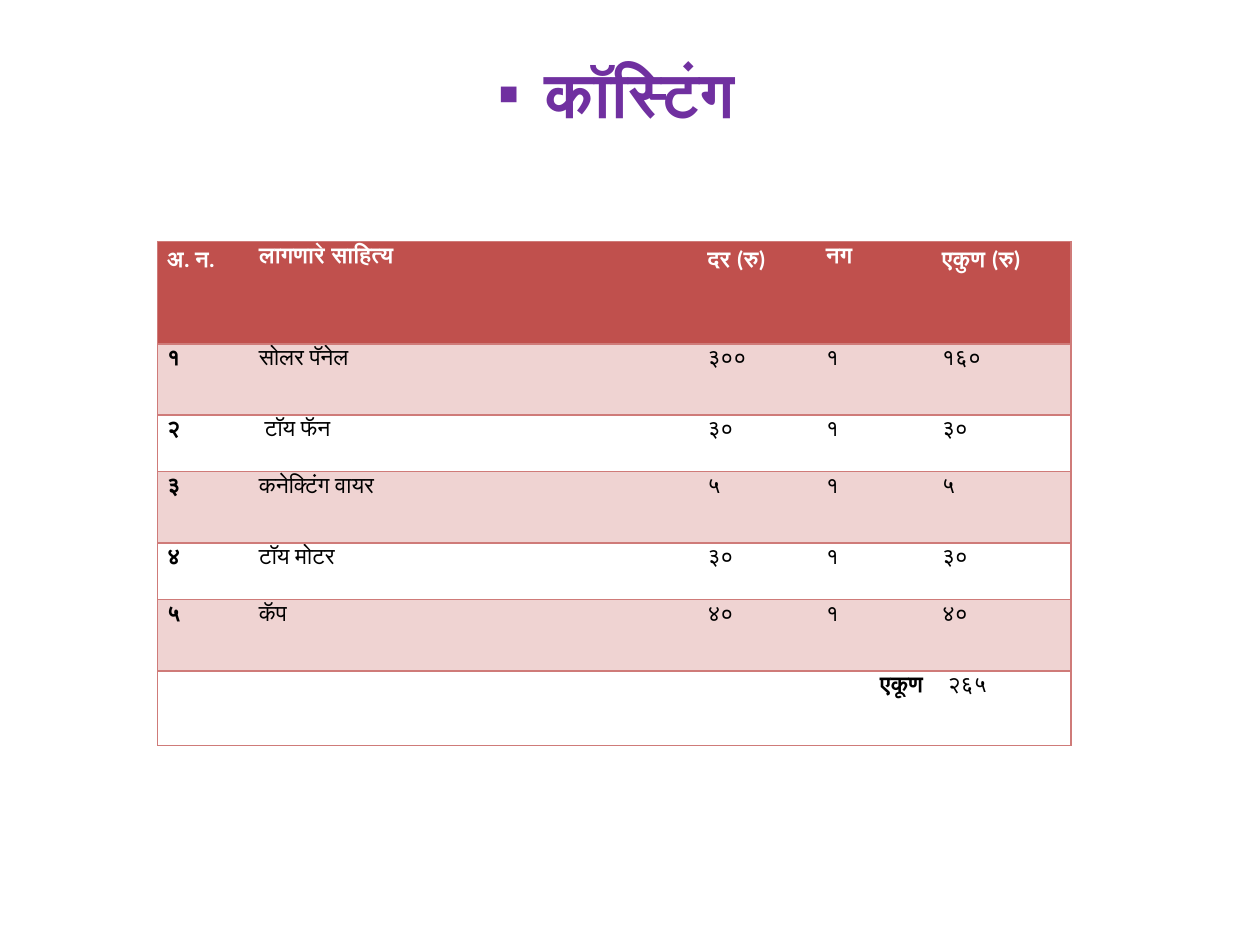
from lxml.etree import SubElement
from pptx import Presentation
from pptx.dml.color import RGBColor
from pptx.enum.text import MSO_ANCHOR, PP_ALIGN
from pptx.oxml.ns import qn
from pptx.util import Cm, Pt

COLORS = {
    "title": "7030A0",
    "header": "C0504D",
    "band": "EFD3D2",
    "rule": "CF7B79",
    "white": "FFFFFF",
    "black": "000000",
}
HEADINGS = ["अ. न.", "लागणारे साहित्य", "दर (रु)", "नग", "एकुण (रु)"]
ITEMS = [
    ["१", "सोलर पॅनेल", "३००", "१", "१६०"],
    ["२", " टॉय फॅन", "३०", "१", "३०"],
    ["३", "कनेक्टिंग वायर", "५", "१", "५"],
    ["४", "टॉय मोटर", "३०", "१", "३०"],
    ["५", "कॅप", "४०", "१", "४०"],
]
TOTAL = ["एकूण", "", "", "", " २६५"]
COLUMN_WIDTHS = [1.85, 9.04, 2.39, 2.34, 2.79]
ROW_HEIGHTS = [2.06, 1.44, 1.14, 1.44, 1.14, 1.44, 1.5]


def write_text(frame, text, *, size, font, color, bold=False,
               align=PP_ALIGN.LEFT, line_spacing=None, before=0, after=0):
    para = frame.paragraphs[0]
    para.alignment = align
    para.line_spacing = line_spacing
    para.space_before = Pt(before)
    para.space_after = Pt(after)
    span = para.add_run()
    span.text = text
    span.font.size = Pt(size)
    span.font.name = font
    span.font.bold = bold
    span.font.color.rgb = RGBColor.from_string(COLORS[color])
    return para


def add_bullet(para, character, indent):
    properties = para._p.get_or_add_pPr()
    properties.set("marL", str(indent))
    properties.set("indent", str(-indent))
    SubElement(properties, qn("a:buFont"), typeface="Arial")
    SubElement(properties, qn("a:buChar"), char=character)


def draw_borders(cell, shown):
    properties = cell._tc.get_or_add_tcPr()
    for side in "LRTB":
        line = SubElement(properties, qn(f"a:ln{side}"), w=str(Pt(1)))
        if side in shown:
            fill = SubElement(line, qn("a:solidFill"))
            SubElement(fill, qn("a:srgbClr"), val=COLORS["rule"])
        else:
            SubElement(line, qn("a:noFill"))


def fill_cell(cell, color):
    if color:
        cell.fill.solid()
        cell.fill.fore_color.rgb = RGBColor.from_string(COLORS[color])
    else:
        cell.fill.background()


def add_title(page, left, top, width, height):
    box = page.shapes.add_textbox(left, top, width, height)
    frame = box.text_frame
    frame.word_wrap = True
    frame.vertical_anchor = MSO_ANCHOR.MIDDLE
    para = write_text(frame, "कॉस्टिंग ", size=36, font="Montserrat",
                      color="title", bold=True, align=PP_ALIGN.CENTER, before=7.2)
    add_bullet(para, "▪", Cm(0.95))


def add_cost_table(page, left, top, width, height):
    rows = [HEADINGS, *ITEMS, TOTAL]
    last_row, last_column = len(rows) - 1, len(HEADINGS) - 1
    table = page.shapes.add_table(
        len(rows), len(HEADINGS), left, top, width, height).table
    table.first_row = False
    table.horz_banding = False
    for column, column_width in zip(table.columns, COLUMN_WIDTHS):
        column.width = Cm(column_width)
    for row, row_height in zip(table.rows, ROW_HEIGHTS):
        row.height = Cm(row_height)
    table.cell(last_row, 0).merge(table.cell(last_row, last_column - 1))

    for row_index, texts in enumerate(rows):
        is_header, is_total = row_index == 0, row_index == last_row
        background = "header" if is_header else "band" if row_index % 2 else None
        for column_index, text in enumerate(texts):
            cell = table.cell(row_index, column_index)
            is_first, is_last = column_index == 0, column_index == last_column
            draw_borders(cell, "TB" + "L" * is_first + "R" * is_last)
            fill_cell(cell, background)
            cell.margin_left = cell.margin_right = Cm(0.19)
            cell.margin_top = cell.margin_bottom = 0
            if not text:
                continue
            uses_calibri = is_header or (row_index == 1 and is_first)
            write_text(cell.text_frame, text, size=13,
                       font="Calibri" if uses_calibri else "Arial",
                       color="white" if is_header else "black",
                       bold=is_header or is_first,
                       align=PP_ALIGN.RIGHT if is_total and is_first else PP_ALIGN.LEFT,
                       line_spacing=1.15, after=10 if is_last else 0)


def main():
    deck = Presentation()
    deck.slide_width, deck.slide_height = Cm(25.4), Cm(19.05)
    page = deck.slides.add_slide(deck.slide_layouts[6])
    add_title(page, Cm(0), Cm(0.13), Cm(25.2), Cm(3.48))
    add_cost_table(page, Cm(3.18), Cm(4.87),
                   Cm(sum(COLUMN_WIDTHS)), Cm(sum(ROW_HEIGHTS)))
    deck.save("out.pptx")


if __name__ == "__main__":
    main()
